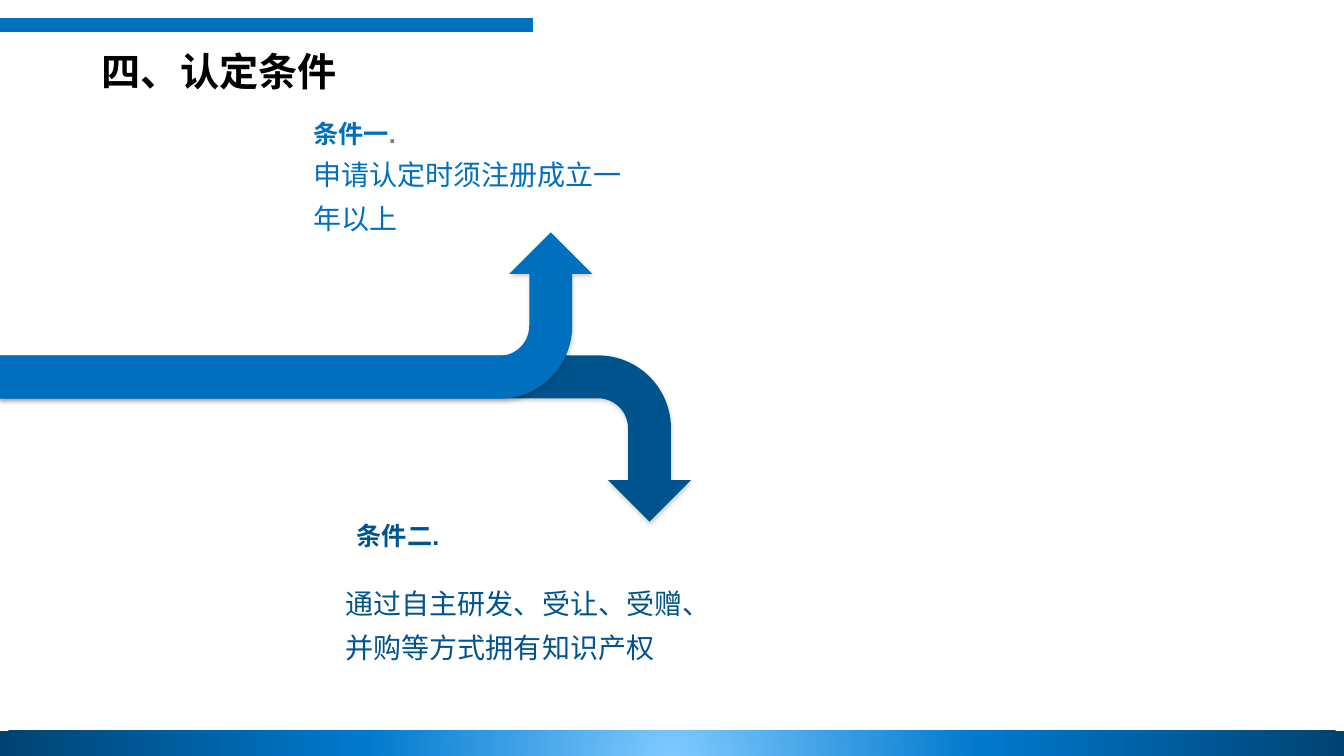
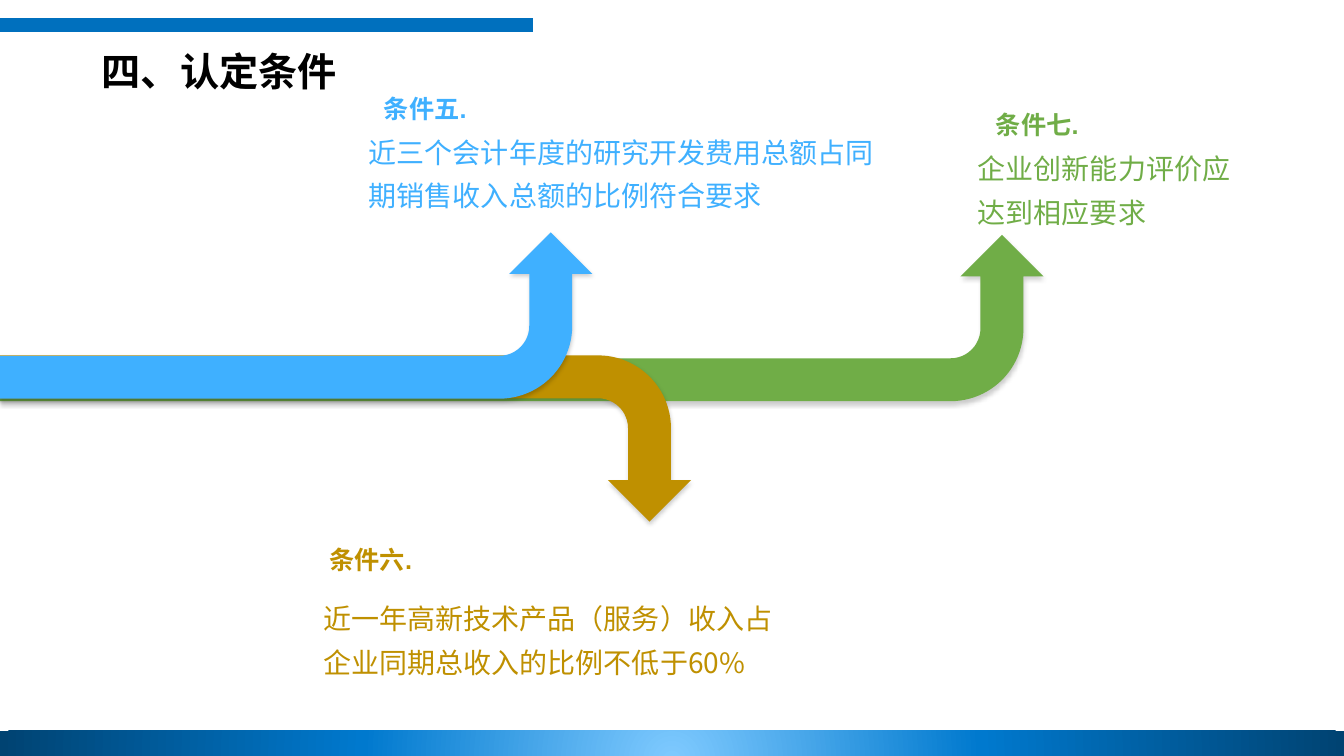
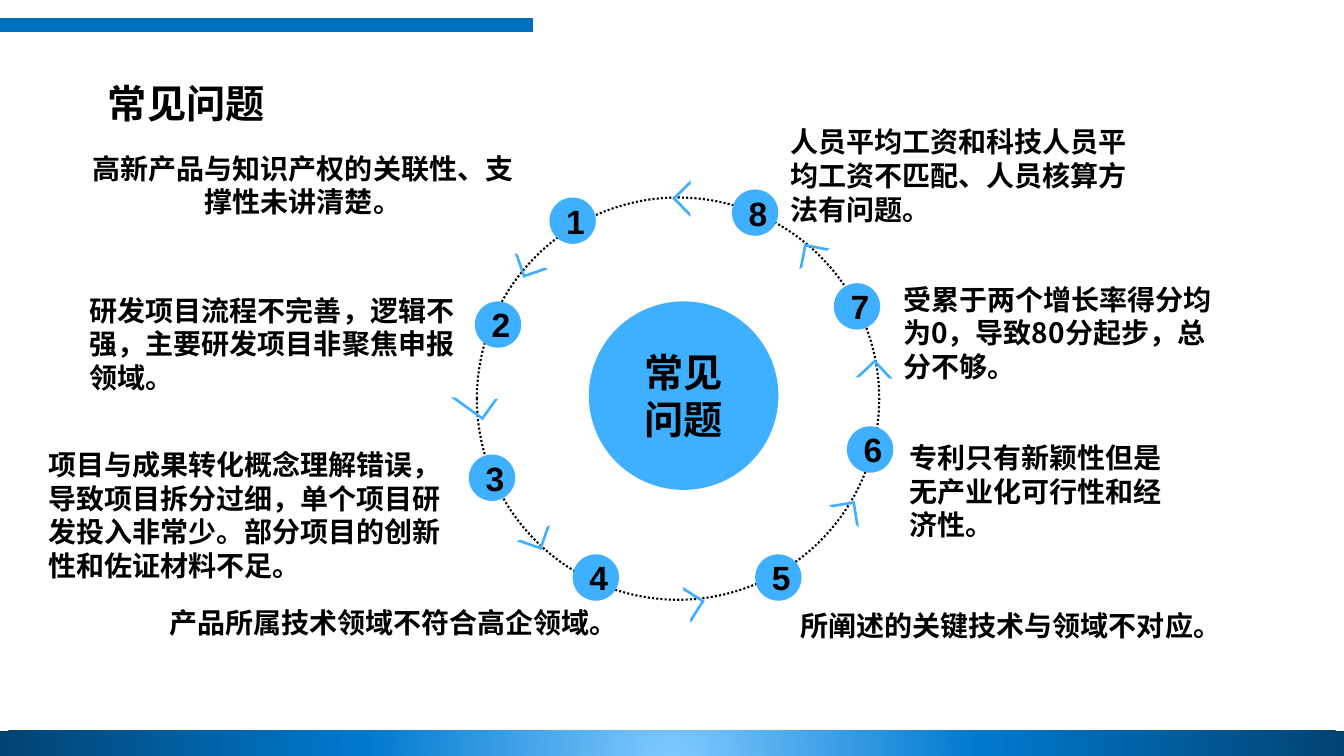
from lxml import etree
from pptx import Presentation
from pptx.dml.color import RGBColor
from pptx.enum.dml import MSO_LINE
from pptx.enum.shapes import MSO_CONNECTOR, MSO_SHAPE
from pptx.enum.text import MSO_ANCHOR, MSO_AUTO_SIZE, PP_ALIGN
from pptx.oxml import parse_xml
from pptx.oxml.ns import nsdecls, qn
from pptx.util import Pt

EMU_PER_PX = 9144  # 100 px to the inch
TITLE_ONLY = 5
CJK_FONT = "Noto Sans CJK SC"
BLACK, GREY = "000000", "7C7C7C"
BLUE, NAVY, SKY, GOLD, GREEN = "0070BE", "00548E", "3FB0FF", "BF9000", "70AD47"
BAND_STOPS = [(0, "7FCAFF"), (46, "0079CE"), (100, "004372")]

LEFT, CENTER, RIGHT = PP_ALIGN.LEFT, PP_ALIGN.CENTER, PP_ALIGN.RIGHT
TOP, MIDDLE = MSO_ANCHOR.TOP, MSO_ANCHOR.MIDDLE
NO_FIT, GROW = MSO_AUTO_SIZE.NONE, MSO_AUTO_SIZE.SHAPE_TO_FIT_TEXT
RECTANGLE, OVAL = MSO_SHAPE.RECTANGLE, MSO_SHAPE.OVAL
BENT_ARROW, HALF_FRAME = MSO_SHAPE.BENT_ARROW, MSO_SHAPE.HALF_FRAME
STRAIGHT, DOTTED = MSO_CONNECTOR.STRAIGHT, MSO_LINE.ROUND_DOT


def px(*lengths):
    return [length * EMU_PER_PX for length in lengths]


def rgb(color):
    return RGBColor.from_string(color)


def write(shape, text, size=20, color=BLACK, font=CJK_FONT, bold=False,
          align=LEFT, spacing=None, tail="", tail_color=None):
    """Fill the shape with one paragraph; tail is a second run in its own colour."""
    paragraph = shape.text_frame.paragraphs[0]
    paragraph.alignment = align
    if spacing:
        paragraph.line_spacing = spacing
    for part, part_color in ((text, color), (tail, tail_color or color)):
        if not part:
            continue
        run = paragraph.add_run()
        run.text = part
        run.font.name, run.font.size, run.font.bold = font, Pt(size), bold
        run.font.color.rgb = rgb(part_color)
        east_asian = etree.SubElement(run.font._element, qn("a:ea"))
        east_asian.set("typeface", CJK_FONT)


class Deck:
    def __init__(self):
        self.presentation = Presentation()
        self.presentation.slide_width, self.presentation.slide_height = px(1333, 750)
        self.layout = self.presentation.slide_layouts[TITLE_ONLY]
        self.slide = None

    def start(self, title, left, top, width):
        first = self.slide is None
        self.slide = self.presentation.slides.add_slide(self.layout)
        if first:
            self.decorate_layout()
        shape = self.slide.shapes.title
        shape.left, shape.top, shape.width, shape.height = px(left, top, width, 58)
        shape.text_frame.auto_size = NO_FIT
        shape.text_frame.vertical_anchor = MIDDLE
        write(shape, title, size=28, bold=True, spacing=1.5)

    def decorate_layout(self):
        """Draw the top bar and bottom band, then hand them to the shared layout."""
        bar = self.slide.shapes.add_connector(STRAIGHT, *px(0, 25, 529, 25))
        bar.line.color.rgb, bar.line.width = rgb(BLUE), Pt(10)
        etree.SubElement(bar._element.spPr, qn("a:effectLst"))
        band = self.shape(RECTANGLE, (0, 725, 1333, 29))
        stops = "".join(
            f'<a:gs pos="{position * 1000}"><a:srgbClr val="{color}"/></a:gs>'
            for position, color in BAND_STOPS)
        gradient = parse_xml(
            f'<a:gradFill {nsdecls("a")} rotWithShape="1"><a:gsLst>{stops}</a:gsLst>'
            '<a:path path="circle"><a:fillToRect l="50000" t="130000" r="50000" b="-30000"/>'
            '</a:path></a:gradFill>')
        properties = band._element.spPr
        properties.replace(properties.find(qn("a:noFill")), gradient)
        for index, item in enumerate((bar, band), start=2):
            self.layout.shapes._spTree.insert(index, item._element)

    def shape(self, kind, box, color=None, rotation=0, adjustments=()):
        shape = self.slide.shapes.add_shape(kind, *px(*box))
        shape.shadow.inherit = False
        shape.rotation = rotation
        for index, value in enumerate(adjustments):
            shape.adjustments[index] = value
        if color:
            shape.fill.solid()
            shape.fill.fore_color.rgb = rgb(color)
        else:
            shape.fill.background()
        shape.line.fill.background()
        return shape

    def arrow(self, box, color, up=True):
        shape = self.shape(BENT_ARROW, box, color, 90 if up else 270,
                           (0.258, 0.25, 0.25, 0.438))
        frame = shape._element.spPr.xfrm
        frame.set("flipH", "1")
        if not up:
            frame.set("flipV", "1")
        shape._element.spPr.find(qn("a:effectLst")).append(parse_xml(
            f'<a:outerShdw {nsdecls("a")} blurRad="39370" dist="22860" dir="5400000"'
            ' algn="t" rotWithShape="0"><a:srgbClr val="000000"><a:alpha val="20000"/>'
            '</a:srgbClr></a:outerShdw>'))

    def text(self, box, text, anchor=TOP, wrap=True, **text_format):
        shape = self.slide.shapes.add_textbox(*px(*box))
        frame = shape.text_frame
        frame.word_wrap, frame.auto_size, frame.vertical_anchor = wrap, GROW, anchor
        write(shape, text, **text_format)

    def condition(self, number, color, label_box, text_box, text,
                  wrap_label=True, dot_color=None):
        self.text(label_box, f"条件{number}", anchor=MIDDLE, wrap=wrap_label, size=18,
                  color=color, font="Arial", bold=True, tail=".", tail_color=dot_color)
        self.text(text_box, text, anchor=MIDDLE, color=color, spacing=1.3)

    def disc(self, box, text, size, font):
        shape = self.shape(OVAL, box, SKY)
        shape.text_frame.vertical_anchor = MIDDLE
        write(shape, text, size=size, font=font, bold=True, align=CENTER)


CONDITIONS_TITLE = ("四、认定条件", 91, 30, 488)
NEAR_UP, NEAR_DOWN, FAR_UP = (211, 19, 165, 588), (260, 92, 165, 686), (435, -202, 165, 1035)

# left, top, width, rotation of each chevron on the ring
CHEVRONS = [
    (672, 184, 26, 315.4), (514, 246, 26, 250.9), (451, 382, 39, 215.7),
    (516, 516, 26, 199.2), (668, 587, 26, 122.5), (824, 499, 26, 81),
    (854, 362, 26, 47), (795, 244, 26, 11),
]
# disc corner, text box, text, alignment, wrap; numbered in order
PROBLEMS = [
    ((545, 196), (73, 145, 455, 77), "高新产品与知识产权的关联性、支撑性未讲清楚。", CENTER, True),
    ((471, 299), (79, 286, 395, 111),
     "研发项目流程不完善，逻辑不强，主要研发项目非聚焦申报领域。", LEFT, True),
    ((465, 451), (38, 439, 434, 145),
     "项目与成果转化概念理解错误，导致项目拆分过细，单个项目研发投入非常少。"
     "部分项目的创新性和佐证材料不足。", LEFT, True),
    ((568, 550), (86, 596, 537, 44), "产品所属技术领域不符合高企领域。", RIGHT, True),
    ((749, 550), (784, 599, 444, 44), "所阐述的关键技术与领域不对应。", LEFT, False),
    ((840, 423), (892, 432, 294, 111), "专利只有新颖性但是无产业化可行性和经济性。", LEFT, True),
    ((827, 281), (886, 275, 346, 111),
     "受累于两个增长率得分均为0，导致80分起步，总分不够。", LEFT, True),
    ((726, 188), (774, 119, 361, 111),
     "人员平均工资和科技人员平均工资不匹配、人员核算方法有问题。", LEFT, True),
]


def first_conditions(deck):
    deck.start(*CONDITIONS_TITLE)
    deck.arrow(NEAR_DOWN, NAVY, up=False)
    deck.arrow(NEAR_UP, BLUE)
    deck.condition("一", BLUE, (301, 112, 103, 40), (301, 144, 350, 91),
                   "申请认定时须注册成立一年以上", wrap_label=False, dot_color=GREY)
    deck.condition("二", NAVY, (344, 511, 175, 40), (333, 567, 378, 97),
                   "通过自主研发、受让、受赠、并购等方式拥有知识产权")


def last_conditions(deck):
    deck.start(*CONDITIONS_TITLE)
    deck.arrow(FAR_UP, GREEN)
    deck.arrow(NEAR_DOWN, GOLD, up=False)
    deck.arrow(NEAR_UP, SKY)
    deck.condition("五", SKY, (371, 88, 144, 40), (356, 119, 534, 97),
                   "近三个会计年度的研究开发费用总额占同期销售收入总额的比例符合要求")
    deck.condition("六", GOLD, (317, 535, 245, 40), (311, 582, 486, 97),
                   "近一年高新技术产品（服务）收入占企业同期总收入的比例不低于60%")
    deck.condition("七", GREEN, (978, 103, 146, 40), (960, 135, 290, 97),
                   "企业创新能力评价应达到相应要求")


def common_problems(deck):
    deck.start("常见问题", 97, 61, 605)
    ring = deck.shape(OVAL, (473, 196, 399, 399))
    ring.line.color.rgb, ring.line.width = rgb(BLACK), Pt(1.5)
    ring.line.dash_style = DOTTED
    for left, top, width, rotation in CHEVRONS:
        deck.shape(HALF_FRAME, (left, top, width, 26), SKY, rotation, (0.1, 0.1))
    deck.disc((584, 299, 188, 187), "常见问题", 28, "Quicksand")
    for number, (corner, box, text, align, wrap) in enumerate(PROBLEMS, start=1):
        deck.disc((*corner, 46, 46), str(number), 24, "Arial")
        deck.text(box, text, wrap=wrap, bold=True, align=align)


def main():
    deck = Deck()
    first_conditions(deck)
    last_conditions(deck)
    common_problems(deck)
    deck.presentation.save("out.pptx")


if __name__ == "__main__":
    main()
